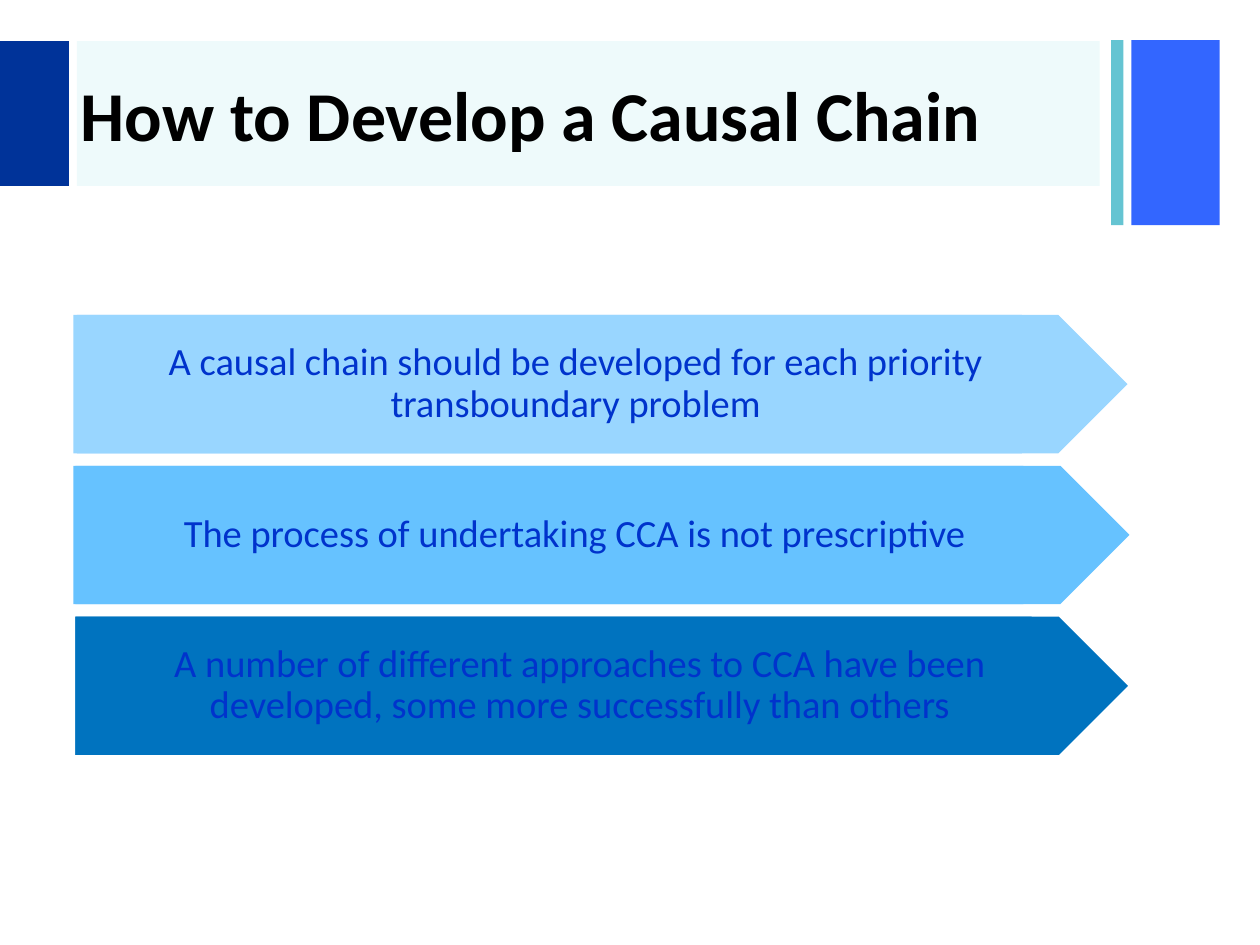
from dataclasses import dataclass

from lxml import etree
from pptx import Presentation
from pptx.dml.color import RGBColor
from pptx.enum.shapes import MSO_SHAPE
from pptx.enum.text import MSO_ANCHOR, PP_ALIGN
from pptx.oxml.ns import qn
from pptx.util import Cm, Pt

RECTANGLE, PENTAGON = MSO_SHAPE.RECTANGLE, MSO_SHAPE.PENTAGON
MIDDLE = MSO_ANCHOR.MIDDLE
LEFT, CENTER = PP_ALIGN.LEFT, PP_ALIGN.CENTER

FONT = "Calibri"
BLACK = RGBColor(0x00, 0x00, 0x00)
TEXT_BLUE = RGBColor(0x00, 0x33, 0xCC)
NAVY = RGBColor(0x00, 0x33, 0x99)
ROYAL_BLUE = RGBColor(0x33, 0x66, 0xFF)
TEAL = RGBColor(0x65, 0xC4, 0xD2)
AQUA = RGBColor(0x14, 0xC5, 0xD0)
PALE_BLUE = RGBColor(0x99, 0xD6, 0xFF)
SKY_BLUE = RGBColor(0x66, 0xC2, 0xFF)
DEEP_BLUE = RGBColor(0x00, 0x73, 0xBF)

# Arrow rows, in centimetres
FIRST_ROW_TOP, ROW_PITCH, ROW_HEIGHT = 6.35, 3.04, 2.79


@dataclass
class Block:
    """A plain filled shape, measured in centimetres."""
    left: float
    top: float
    width: float
    height: float
    color: RGBColor
    opacity: int = 100


@dataclass
class Arrow:
    """One statement: a pentagon with a text panel over it."""
    text: str
    color: RGBColor
    plate_left: float
    plate_width: float
    panel_left: float
    panel_width: float


HEADER_BLOCKS = [
    Block(22.81, 0.81, 1.78, 3.73, ROYAL_BLUE),
    Block(22.4, 0.81, 0.25, 3.73, TEAL),
    Block(1.55, 0.83, 20.62, 2.92, AQUA, opacity=7),
    Block(0, 0.83, 1.39, 2.92, NAVY),
]

ARROWS = [
    Arrow("A causal chain should be developed for each priority "
          "transboundary problem", PALE_BLUE, 1.48, 21.25, 1.55, 19.05),
    Arrow("The process of undertaking CCA is not prescriptive",
          SKY_BLUE, 1.52, 21.25, 1.48, 19.15),
    Arrow("A number of different approaches to CCA have been developed, "
          "some more successfully than others",
          DEEP_BLUE, 1.52, 21.22, 1.52, 19.28),
]


def draw_block(shapes, block: Block, kind=RECTANGLE):
    shape = shapes.add_shape(kind, Cm(block.left), Cm(block.top),
                             Cm(block.width), Cm(block.height))
    shape.shadow.inherit = False
    shape.fill.solid()
    shape.fill.fore_color.rgb = block.color
    shape.line.fill.background()
    if block.opacity < 100:
        color = shape.element.spPr.find(f"{qn('a:solidFill')}/{qn('a:srgbClr')}")
        etree.SubElement(color, qn("a:alpha"), val=str(block.opacity * 1000))
    return shape


def write_text(shape, text: str, size: float, color: RGBColor,
               alignment, bold: bool = False) -> None:
    frame = shape.text_frame
    frame.word_wrap = True
    frame.vertical_anchor = MIDDLE
    frame.text = text
    para = frame.paragraphs[0]
    para.alignment = alignment
    font = para.runs[0].font
    font.name, font.size, font.bold = FONT, Pt(size), bold
    font.color.rgb = color


def draw_arrow(slide, arrow: Arrow, top: float) -> None:
    group = slide.shapes.add_group_shape()
    draw_block(group.shapes, Block(arrow.plate_left, top, arrow.plate_width,
                                   ROW_HEIGHT, arrow.color), PENTAGON)
    panel = draw_block(group.shapes, Block(arrow.panel_left, top, arrow.panel_width,
                                           ROW_HEIGHT, arrow.color))
    write_text(panel, arrow.text, 22, TEXT_BLUE, CENTER)
    frame = panel.text_frame
    frame.margin_left, frame.margin_right = Cm(1.42), Cm(0.36)
    frame.margin_top = frame.margin_bottom = Cm(0.18)
    frame.paragraphs[0].line_spacing = 0.9


def main() -> None:
    deck = Presentation()
    deck.slide_width, deck.slide_height = Cm(25.4), Cm(19.05)
    slide = deck.slides.add_slide(deck.slide_layouts[5])

    # Header bars
    for block in HEADER_BLOCKS:
        draw_block(slide.shapes, block)

    # Title, brought in front of the header bars
    title = slide.shapes.title
    title.element.getparent().append(title.element)
    title.left, title.top = Cm(1.37), Cm(0.86)
    title.width, title.height = Cm(21), Cm(2.84)
    write_text(title, "How to Develop a Causal Chain", 40, BLACK, LEFT, bold=True)

    # Statement arrows
    for row, arrow in enumerate(ARROWS):
        draw_arrow(slide, arrow, FIRST_ROW_TOP + row * ROW_PITCH)

    deck.save("out.pptx")


if __name__ == "__main__":
    main()
